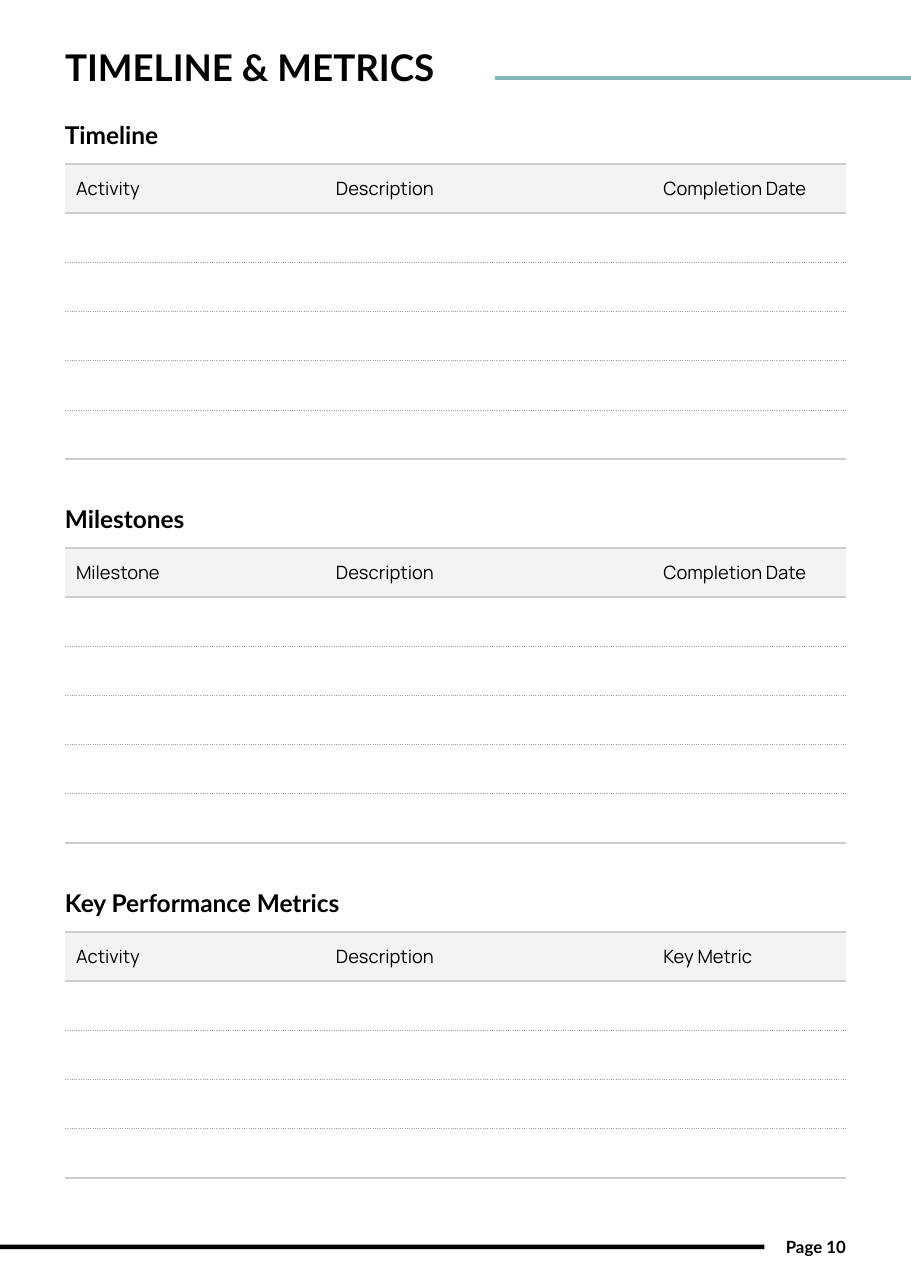
from lxml.etree import SubElement
from pptx import Presentation
from pptx.dml.color import RGBColor
from pptx.enum.shapes import MSO_CONNECTOR, MSO_SHAPE
from pptx.enum.text import MSO_ANCHOR, MSO_AUTO_SIZE, PP_ALIGN
from pptx.oxml.ns import qn
from pptx.util import Emu, Pt

TITLE = "TIMELINE & METRICS"
FOOTER = "Page 10"
SECTIONS = [
    ("Timeline", ("Activity", "Description", "Completion Date"), 5),
    ("Milestones", ("Milestone", "Description", "Completion Date"), 5),
    ("Key Performance Metrics", ("Activity", "Description", "Key Metric"), 4),
]
COLORS = {
    "ink": "000000",
    "accent": "81B8BA",
    "header": "F3F3F3",
    "rule": "CCCCCC",
    "dots": "9E9E9E",
}
HEAD_FONT, BODY_FONT = "Lato", "Manrope"

PX = 3048
PAGE_W, PAGE_H = 2481, 3507
LEFT = 177
COLS = (708, 892, 526)
ROW_H = 134
FIRST_HEADING, SECTION_STEP, TABLE_DROP = 327, 1045, 120
CELL_PAD = 30
SOLID = ("rule", 1.5, "solid")
DOTTED = ("dots", 0.75, "sysDot")


def px(n):
    return Emu(n * PX)


def color(name):
    return RGBColor.from_string(COLORS[name])


def style(p, font, size, bold=False):
    p.font.name = font
    p.font.size = Pt(size)
    p.font.bold = bold
    p.font.color.rgb = color("ink")


def add_label(slide, text, x, y, w, h, size, align=PP_ALIGN.LEFT):
    tf = slide.shapes.add_textbox(px(x), px(y), px(w), px(h)).text_frame
    tf.margin_left = tf.margin_right = tf.margin_top = tf.margin_bottom = 0
    tf.word_wrap = True
    tf.auto_size = MSO_AUTO_SIZE.SHAPE_TO_FIT_TEXT
    p = tf.paragraphs[0]
    p.text = text
    p.alignment = align
    style(p, HEAD_FONT, size, True)


def set_borders(cell, top, bottom):
    tc_pr = cell._tc.get_or_add_tcPr()
    for tag, line in (("lnL", None), ("lnR", None), ("lnT", top), ("lnB", bottom)):
        ln = SubElement(tc_pr, qn(f"a:{tag}"))
        if line is None:
            SubElement(ln, qn("a:noFill"))
            continue
        name, width, dash = line
        ln.set("w", str(Pt(width)))
        fill = SubElement(ln, qn("a:solidFill"))
        SubElement(fill, qn("a:srgbClr")).set("val", COLORS[name])
        SubElement(ln, qn("a:prstDash")).set("val", dash)


def add_log(slide, y, headers, blank_rows):
    rows = blank_rows + 1
    table = slide.shapes.add_table(
        rows, len(COLS), px(LEFT), px(y), px(sum(COLS)), px(rows * ROW_H)
    ).table
    table.first_row = table.horz_banding = False
    for col, w in zip(table.columns, COLS):
        col.width = px(w)
    edges = [SOLID, SOLID] + [DOTTED] * (blank_rows - 1) + [SOLID]
    for i, row in enumerate(table.rows):
        row.height = px(ROW_H)
        for cell, header in zip(row.cells, headers):
            set_borders(cell, edges[i], edges[i + 1])
            cell.margin_left = cell.margin_right = px(CELL_PAD)
            cell.margin_top = cell.margin_bottom = 0
            cell.vertical_anchor = MSO_ANCHOR.MIDDLE
            p = cell.text_frame.paragraphs[0]
            if i == 0:
                cell.fill.solid()
                cell.fill.fore_color.rgb = color("header")
                p.text = header
            else:
                cell.fill.background()
            style(p, BODY_FONT, 12)


def main():
    prs = Presentation()
    prs.slide_width, prs.slide_height = px(PAGE_W), px(PAGE_H)
    slide = prs.slides.add_slide(prs.slide_layouts[6])

    bar = slide.shapes.add_shape(MSO_SHAPE.RECTANGLE, 0, px(3389), px(2082), px(12))
    bar.shadow.inherit = False
    bar.fill.solid()
    bar.fill.fore_color.rgb = color("ink")
    bar.line.fill.background()
    add_label(slide, FOOTER, 2082, 3366, 222, 57, 11, PP_ALIGN.RIGHT)

    add_label(slide, TITLE, LEFT, 123, 1104, 120, 24)
    line = slide.shapes.add_connector(
        MSO_CONNECTOR.STRAIGHT, px(1347), px(212), px(PAGE_W), px(212)
    )
    line.line.color.rgb = color("accent")
    line.line.width = Pt(2.25)
    SubElement(line._element.spPr, qn("a:effectLst"))

    for i, (heading, headers, blank_rows) in enumerate(SECTIONS):
        y = FIRST_HEADING + i * SECTION_STEP
        add_label(slide, heading, LEFT, y, sum(COLS), 81, 16)
        add_log(slide, y + TABLE_DROP, headers, blank_rows)

    prs.save("out.pptx")


if __name__ == "__main__":
    main()
